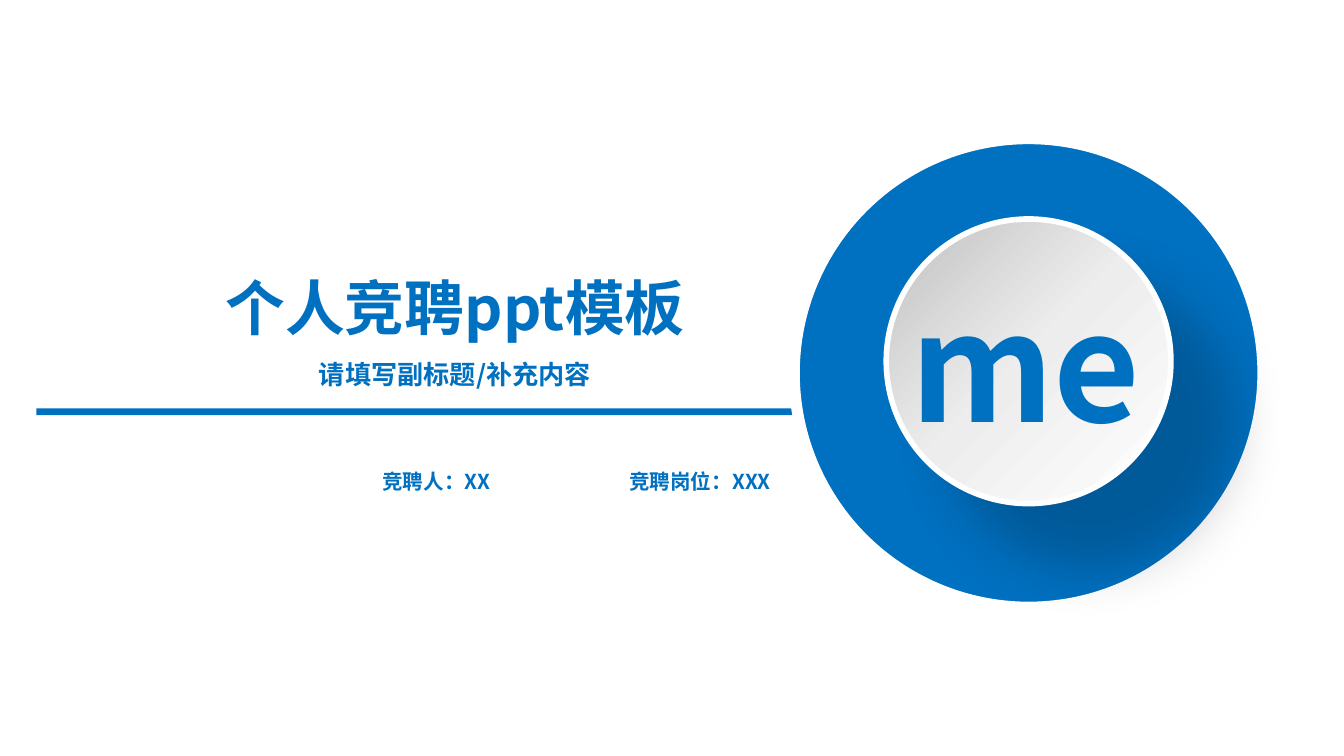
import pptx
import pptx.dml.color
import pptx.enum.shapes
import pptx.enum.text
import pptx.oxml
import pptx.oxml.ns
import pptx.util
from pptx.util import Cm

FONT = "Noto Sans CJK SC"
BLUE, WHITE = "0070C0", "FFFFFF"
MSO_SHAPE = pptx.enum.shapes.MSO_SHAPE
NS = pptx.oxml.ns.nsdecls("a")


def color(value):
    return pptx.dml.color.RGBColor.from_string(value)


def write(holder, text, size, inset=True):
    """Put one bold, centred line of blue text in a text box or placeholder."""
    frame = holder.text_frame
    frame.word_wrap = True
    frame.auto_size = pptx.enum.text.MSO_AUTO_SIZE.NONE
    frame.vertical_anchor = pptx.enum.text.MSO_ANCHOR.TOP
    if not inset:
        frame.margin_left = frame.margin_right = 0
        frame.margin_top = frame.margin_bottom = 0
    paragraph = frame.paragraphs[0]
    paragraph.alignment = pptx.enum.text.PP_ALIGN.CENTER
    run = paragraph.add_run()
    run.text = text
    run.font.size = pptx.util.Pt(size)
    run.font.bold = True
    run.font.name = FONT
    run.font.color.rgb = color(BLUE)
    run.font._element.append(
        pptx.oxml.parse_xml(f'<a:ea {NS} typeface="{FONT}"/>'))


def add_text(slide, left, top, width, height, text, size, inset=True):
    box = slide.shapes.add_textbox(Cm(left), Cm(top), Cm(width), Cm(height))
    write(box, text, size, inset)


def add_figure(slide, kind, left, top, width, height, outline=0):
    """Add a blue shape, with a white outline if a width in points is given."""
    figure = slide.shapes.add_shape(
        kind, Cm(left), Cm(top), Cm(width), Cm(height))
    figure.shadow.inherit = False
    figure.fill.solid()
    figure.fill.fore_color.rgb = color(BLUE)
    if outline:
        figure.line.color.rgb = color(WHITE)
        figure.line.width = pptx.util.Pt(outline)
    else:
        figure.line.fill.background()
    return figure


def shade(disc):
    """Give the disc a silver gradient and a soft shadow to the lower right."""
    properties = disc._element.spPr
    stops = "".join(
        f'<a:gs pos="{position * 1000}"><a:srgbClr val="{value}"/></a:gs>'
        for position, value in ((0, "C0C0C0"), (49, "EDEDED"), (100, WHITE)))
    gradient = pptx.oxml.parse_xml(
        f'<a:gradFill {NS} rotWithShape="1"><a:gsLst>{stops}</a:gsLst>'
        '<a:lin ang="2700000" scaled="0"/></a:gradFill>')
    properties.replace(
        properties.find(pptx.oxml.ns.qn("a:solidFill")), gradient)
    effects = properties.find(pptx.oxml.ns.qn("a:effectLst"))
    effects.append(pptx.oxml.parse_xml(
        f'<a:outerShdw {NS} blurRad="{pptx.util.Pt(29)}" '
        f'dist="{pptx.util.Pt(46)}" dir="2700000" algn="tl" '
        'rotWithShape="0"><a:srgbClr val="000000">'
        '<a:alpha val="20000"/></a:srgbClr></a:outerShdw>'))


def add_emblem(slide, left, top, size):
    add_figure(slide, MSO_SHAPE.OVAL, left, top, size, size, outline=6)
    disc_size = 5.38
    disc_left = left + (size - disc_size) / 2
    disc = add_figure(slide, MSO_SHAPE.OVAL, disc_left, top + 1.52,
                      disc_size, disc_size, outline=3)
    shade(disc)
    add_text(slide, left + 2.06, top + 2.54, 4.62, 3.43, "me", 80, inset=False)


def add_heading(slide, left, top, width):
    title = slide.shapes.title
    title.left, title.top = Cm(left), Cm(top)
    title.width, title.height = Cm(width), Cm(1.63)
    write(title, "个人竞聘ppt模板", 32)
    add_text(slide, left, top + 1.65, width, 0.86, "请填写副标题/补充内容", 14)


def add_details(slide, left, top, width):
    labels = ("竞聘人：XX", "竞聘岗位：XXX")
    gap = 0.26
    column = (width - gap) / len(labels)
    for index, label in enumerate(labels):
        add_text(slide, left + index * (column + gap), top,
                 column, 0.74, label, 11)


def main():
    presentation = pptx.Presentation()
    presentation.slide_width = Cm(25.4)
    presentation.slide_height = Cm(14.29)
    slide = presentation.slides.add_slide(presentation.slide_layouts[5])
    slide.background.fill.solid()
    slide.background.fill.fore_color.rgb = color(WHITE)
    add_figure(slide, MSO_SHAPE.RECTANGLE, 0.69, 7.72, 16.43, 0.13)
    add_emblem(slide, 15.01, 2.62, 8.86)
    add_heading(slide, 3.1, 5, 11)
    add_details(slide, 5.89, 8.74, 9.7)
    presentation.save("out.pptx")


if __name__ == "__main__":
    main()
